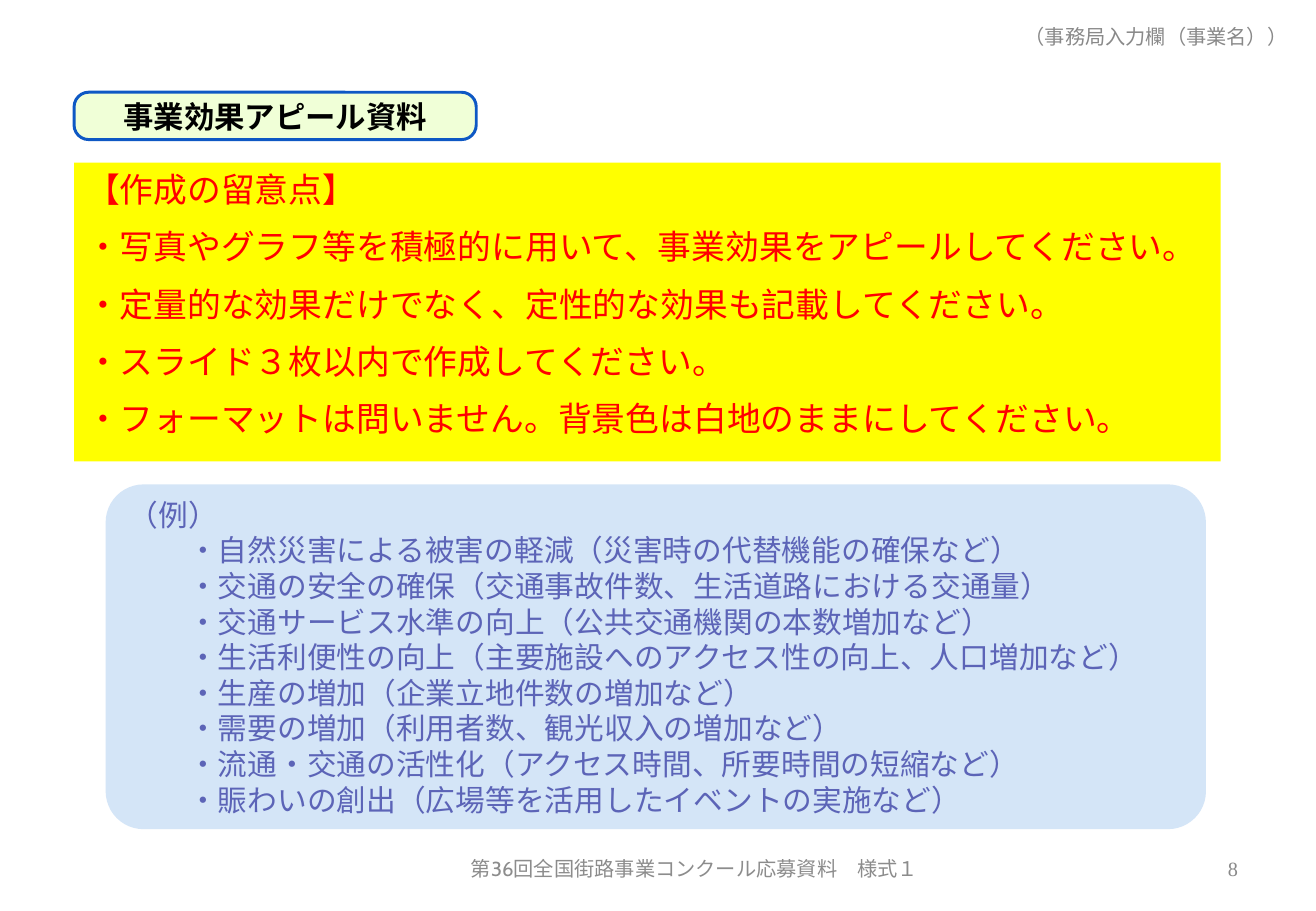
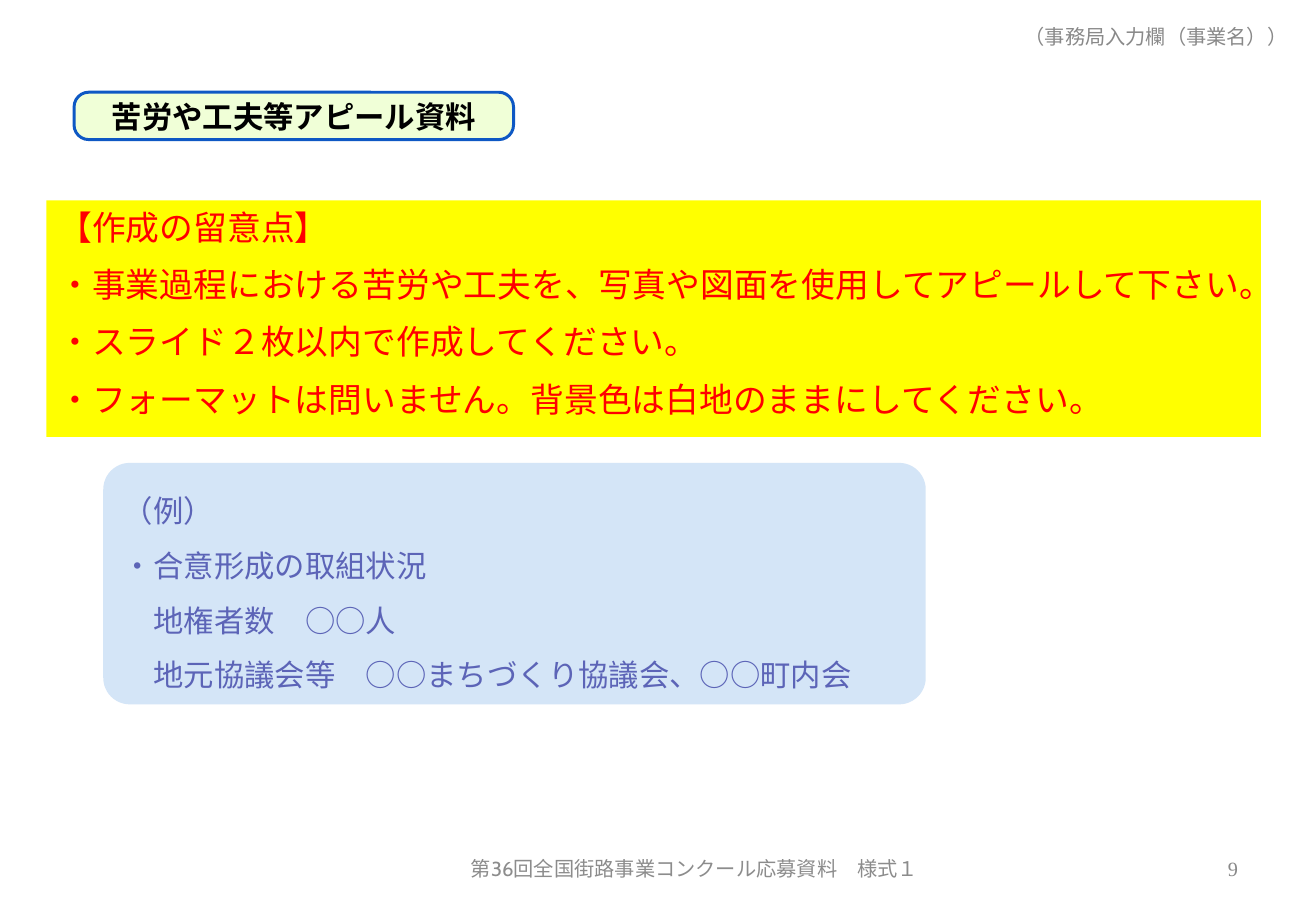
"""Build two contest application slides with writing notes and examples."""
from pptx import Presentation
from pptx.dml.color import RGBColor
from pptx.enum.shapes import MSO_SHAPE
from pptx.enum.text import MSO_ANCHOR, MSO_AUTO_SIZE, PP_ALIGN
from pptx.util import Cm, Pt

RECT, ROUND = MSO_SHAPE.RECTANGLE, MSO_SHAPE.ROUNDED_RECTANGLE
TOP, MIDDLE = MSO_ANCHOR.TOP, MSO_ANCHOR.MIDDLE
LEFT, CENTER, RIGHT = PP_ALIGN.LEFT, PP_ALIGN.CENTER, PP_ALIGN.RIGHT
rgb = RGBColor.from_string

BLACK, RED, YELLOW = "000000", "FF0000", "FFFF00"
VIOLET, PALE_BLUE = "5C64B7", "D4E5F7"
PALE_GREEN, BLUE = "F0FFD7", "0E58C4"
GRAY, FOOTER_GRAY = "898989", "8C8C8C"
SERIF, SANS, FOOTER_FONT = "Times New Roman", "Arial", "Cabin"

HEADER = "（事務局入力欄（事業名））"
FOOTER = "第36回全国街路事業コンクール応募資料　様式１"
NOTE_HEAD = "【作成の留意点】"
NOTE_FORMAT = "・フォーマットは問いません。背景色は白地のままにしてください。"

SLIDES = [
    {
        "title": "事業効果アピール資料",
        "title_width": 8.41,
        "notes_at": (1.55, 3.4, 23.98, 6.25),
        "notes": [
            "・写真やグラフ等を積極的に用いて、事業効果をアピールしてください。",
            "・定量的な効果だけでなく、定性的な効果も記載してください。",
            "・スライド３枚以内で作成してください。",
        ],
        "examples_at": (2.21, 10.13, 23.01, 7.21),
        "size": 17.6,
        "spacing": 1.0,
        "examples": [
            (0, "（例）"),
            (2, "・自然災害による被害の軽減（災害時の代替機能の確保など）"),
            (2, "・交通の安全の確保（交通事故件数、生活道路における交通量）"),
            (2, "・交通サービス水準の向上（公共交通機関の本数増加など）"),
            (2, "・生活利便性の向上（主要施設へのアクセス性の向上、人口増加など）"),
            (2, "・生産の増加（企業立地件数の増加など）"),
            (2, "・需要の増加（利用者数、観光収入の増加など）"),
            (2, "・流通・交通の活性化（アクセス時間、所要時間の短縮など）"),
            (2, "・賑わいの創出（広場等を活用したイベントの実施など）"),
        ],
    },
    {
        "title": "苦労や工夫等アピール資料",
        "title_width": 9.19,
        "notes_at": (0.97, 4.19, 25.4, 4.95),
        "notes": [
            "・事業過程における苦労や工夫を、写真や図面を使用してアピールして下さい。",
            "・スライド２枚以内で作成してください。",
        ],
        "examples_at": (2.16, 9.68, 17.2, 5.05),
        "size": 18,
        "spacing": 1.5,
        "examples": [
            (0, "（例）"),
            (0, "・合意形成の取組状況"),
            (1, "地権者数　○○人"),
            (1, "地元協議会等　○○まちづくり協議会、○○町内会"),
        ],
    },
]


def add_box(s, kind, at, fill, adj=None, line=None):
    sp = s.shapes.add_shape(kind, *map(Cm, at))
    sp.shadow.inherit = False
    sp.fill.solid()
    sp.fill.fore_color.rgb = rgb(fill)
    if line:
        sp.line.color.rgb = rgb(line)
        sp.line.width = Pt(1.75)
    else:
        sp.line.fill.background()
    if adj:
        sp.adjustments[0] = adj
    return sp


def write(sp, lines, font, size, color, align=LEFT, anchor=MIDDLE,
          bold=False, before=0, spacing=1.0):
    tf = sp.text_frame
    tf.word_wrap = True
    tf.auto_size = MSO_AUTO_SIZE.NONE
    tf.vertical_anchor = anchor
    for i, (level, text) in enumerate(lines):
        p = tf.add_paragraph() if i else tf.paragraphs[0]
        p.alignment = align
        p.line_spacing = spacing
        if i:
            p.space_before = Pt(before)
        if level:
            pPr = p._p.get_or_add_pPr()
            pPr.set("marL", str(Pt(level * size)))
            pPr.set("indent", "0")
        r = p.add_run()
        r.text = text
        r.font.name = font
        r.font.size = Pt(size)
        r.font.bold = bold
        r.font.color.rgb = rgb(color)


prs = Presentation()
prs.slide_width, prs.slide_height = Cm(27.52), Cm(19.05)

for number, data in enumerate(SLIDES, 8):
    s = prs.slides.add_slide(prs.slide_layouts[5])

    title_at = (1.55, 1.93, data["title_width"], 0.99)
    frame = add_box(s, ROUND, title_at, PALE_GREEN, 0.31, BLUE)
    title = s.shapes.title
    title.left, title.top, title.width, title.height = map(Cm, title_at)
    frame.element.addnext(title.element)
    write(title, [(0, data["title"])], SANS, 18, BLACK, CENTER, bold=True)

    notes = add_box(s, RECT, data["notes_at"], YELLOW)
    lines = [(0, text) for text in [NOTE_HEAD, *data["notes"], NOTE_FORMAT]]
    write(notes, lines, SERIF, 20, RED, anchor=TOP, before=10)

    examples = add_box(s, ROUND, data["examples_at"], PALE_BLUE, 0.11)
    write(examples, data["examples"], SANS, data["size"], VIOLET,
          spacing=data["spacing"])

    for text, left, top, width, font, color, align in [
        (HEADER, 20.75, 0.25, 6.43, SERIF, GRAY, RIGHT),
        (FOOTER, 9.35, 17.65, 10.36, FOOTER_FONT, FOOTER_GRAY, CENTER),
        (str(number), 19.71, 17.65, 6.43, SERIF, GRAY, RIGHT),
    ]:
        sp = s.shapes.add_textbox(Cm(left), Cm(top), Cm(width), Cm(1.02))
        write(sp, [(0, text)], font, 12, color, align)

prs.save("out.pptx")
